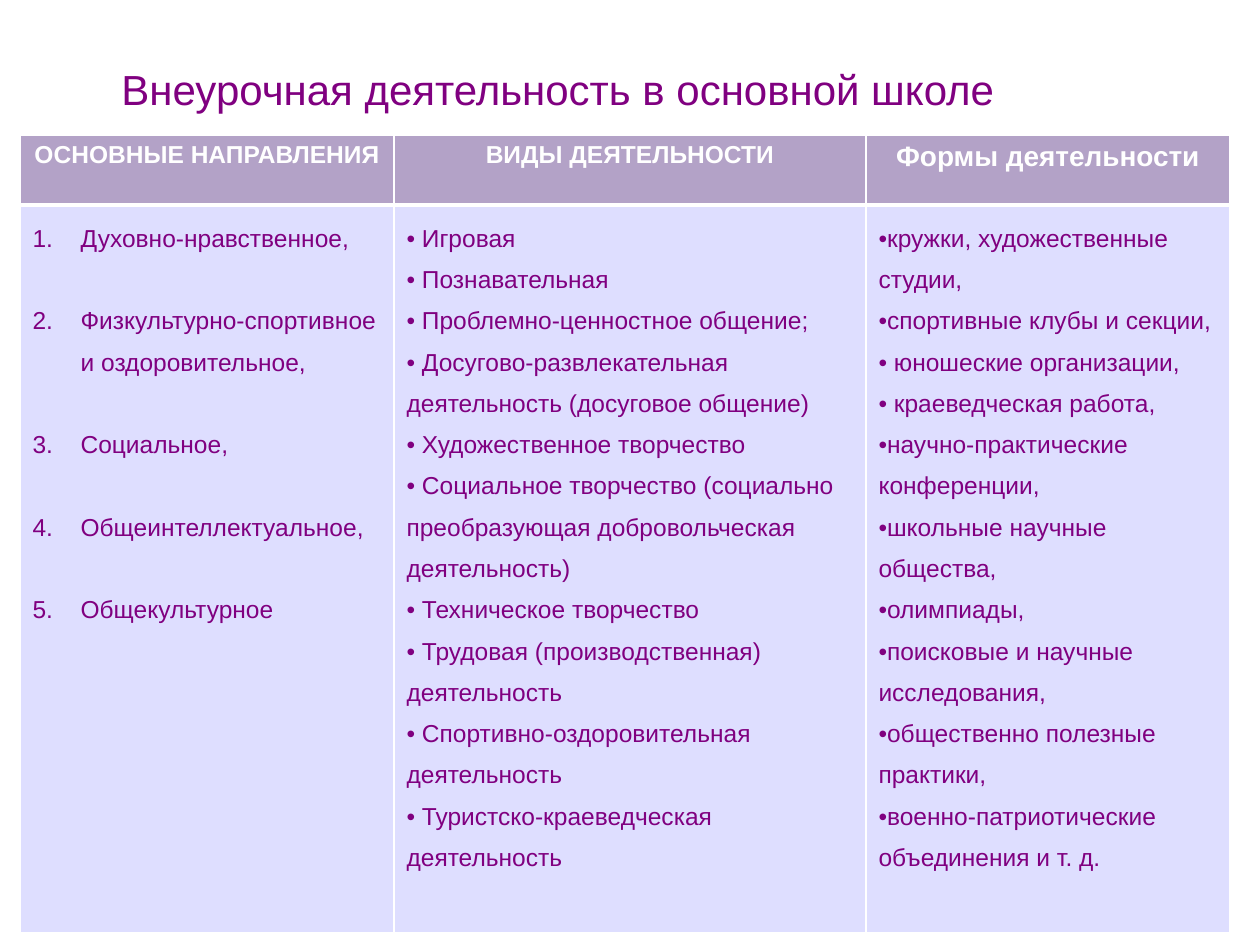
from dataclasses import dataclass

from lxml.etree import SubElement
from pptx import Presentation
from pptx.dml.color import RGBColor
from pptx.enum.text import MSO_ANCHOR, PP_ALIGN
from pptx.oxml.ns import qn
from pptx.table import _Cell
from pptx.text.text import _Paragraph
from pptx.util import Emu, Pt

PX_PER_INCH = 126
FONT = "Arial"
PURPLE = RGBColor(0x80, 0x00, 0x80)
LILAC = RGBColor(0xB3, 0xA2, 0xC7)
LAVENDER = RGBColor(0xDE, 0xDE, 0xFF)
WHITE = RGBColor(0xFF, 0xFF, 0xFF)

HEADER_HEIGHT = 70
BODY_HEIGHT = 728
NUMBER_INDENT = 48
THIN, THICK = 1, 3


@dataclass(frozen=True)
class Column:
    heading: str
    heading_size: int
    width: int
    items: tuple[str, ...]
    numbered: bool = False


COLUMNS = (
    Column("ОСНОВНЫЕ НАПРАВЛЕНИЯ", 14, 374, (
        "Духовно-нравственное,",
        "Физкультурно-спортивное и оздоровительное,",
        "Социальное,",
        "Общеинтеллектуальное,",
        "Общекультурное",
    ), numbered=True),
    Column("ВИДЫ ДЕЯТЕЛЬНОСТИ", 14, 472, (
        " Игровая",
        " Познавательная",
        " Проблемно-ценностное общение;",
        " Досугово-развлекательная деятельность (досуговое общение)",
        " Художественное творчество",
        " Социальное творчество (социально преобразующая добровольческая деятельность)",
        " Техническое творчество",
        " Трудовая (производственная) деятельность",
        " Спортивно-оздоровительная деятельность",
        " Туристско-краеведческая деятельность",
    )),
    Column("Формы деятельности", 16, 364, (
        "кружки, художественные студии,",
        "спортивные клубы и секции,",
        " юношеские организации,",
        " краеведческая работа,",
        "научно-практические конференции,",
        "школьные научные общества,",
        "олимпиады,",
        "поисковые и научные исследования,",
        "общественно полезные практики,",
        "военно-патриотические объединения и т. д.",
    )),
)


def px(length: int) -> Emu:
    return Emu(round(length * 914400 / PX_PER_INCH))


def add_text(paragraph: _Paragraph, text: str, size: int, color: RGBColor,
             bold: bool = False) -> None:
    run = paragraph.add_run()
    run.text = text
    run.font.name = FONT
    run.font.size = Pt(size)
    run.font.bold = bold
    run.font.color.rgb = color


def set_marker(paragraph: _Paragraph, numbered: bool) -> None:
    """Give the paragraph a hanging number or an inline bullet."""
    properties = paragraph._p.get_or_add_pPr()
    indent = px(NUMBER_INDENT) if numbered else 0
    properties.set("marL", str(indent))
    properties.set("indent", str(-indent))
    if numbered:
        SubElement(properties, qn("a:buFont"), typeface="+mj-lt")
        SubElement(properties, qn("a:buAutoNum"), type="arabicPeriod")
    else:
        SubElement(properties, qn("a:buFont"), typeface=FONT)
        SubElement(properties, qn("a:buChar"), char="•")


def style_cell(cell: _Cell, fill: RGBColor, top: int, bottom: int) -> None:
    """Set the fill and white borders; top and bottom are widths in points."""
    properties = cell._tc.get_or_add_tcPr()
    for side, width in (("L", THIN), ("R", THIN), ("T", top), ("B", bottom)):
        line = SubElement(properties, qn(f"a:ln{side}"), w=str(Pt(width)))
        line_fill = SubElement(line, qn("a:solidFill"))
        SubElement(line_fill, qn("a:srgbClr"), val=str(WHITE))
    cell.fill.solid()
    cell.fill.fore_color.rgb = fill


def fill_heading(cell: _Cell, column: Column) -> None:
    style_cell(cell, LILAC, THIN, THICK)
    paragraph = cell.text_frame.paragraphs[0]
    paragraph.alignment = PP_ALIGN.CENTER
    add_text(paragraph, column.heading, column.heading_size, WHITE, bold=True)


def fill_list(cell: _Cell, column: Column) -> None:
    style_cell(cell, LAVENDER, THICK, THIN)
    frame = cell.text_frame
    for index, item in enumerate(column.items):
        paragraph = frame.add_paragraph() if index else frame.paragraphs[0]
        paragraph.line_spacing = 1.5
        if column.numbered and index:
            paragraph.space_before = Pt(23.6)
        set_marker(paragraph, column.numbered)
        add_text(paragraph, item, 14, PURPLE)


def main() -> None:
    presentation = Presentation()
    presentation.slide_width, presentation.slide_height = px(1260), px(945)
    slide = presentation.slides.add_slide(presentation.slide_layouts[5])

    title = slide.shapes.title
    title.left, title.top, title.width, title.height = px(59), px(49), px(998), px(80)
    title.text_frame.vertical_anchor = MSO_ANCHOR.MIDDLE
    paragraph = title.text_frame.paragraphs[0]
    paragraph.alignment = PP_ALIGN.CENTER
    add_text(paragraph, "Внеурочная деятельность в основной школе", 24, PURPLE)

    table = slide.shapes.add_table(
        2, len(COLUMNS), px(20), px(135),
        px(sum(column.width for column in COLUMNS)), px(HEADER_HEIGHT + BODY_HEIGHT),
    ).table
    table.rows[0].height = px(HEADER_HEIGHT)
    table.rows[1].height = px(BODY_HEIGHT)
    for index, column in enumerate(COLUMNS):
        table.columns[index].width = px(column.width)
        fill_heading(table.cell(0, index), column)
        fill_list(table.cell(1, index), column)

    presentation.save("out.pptx")


if __name__ == "__main__":
    main()
